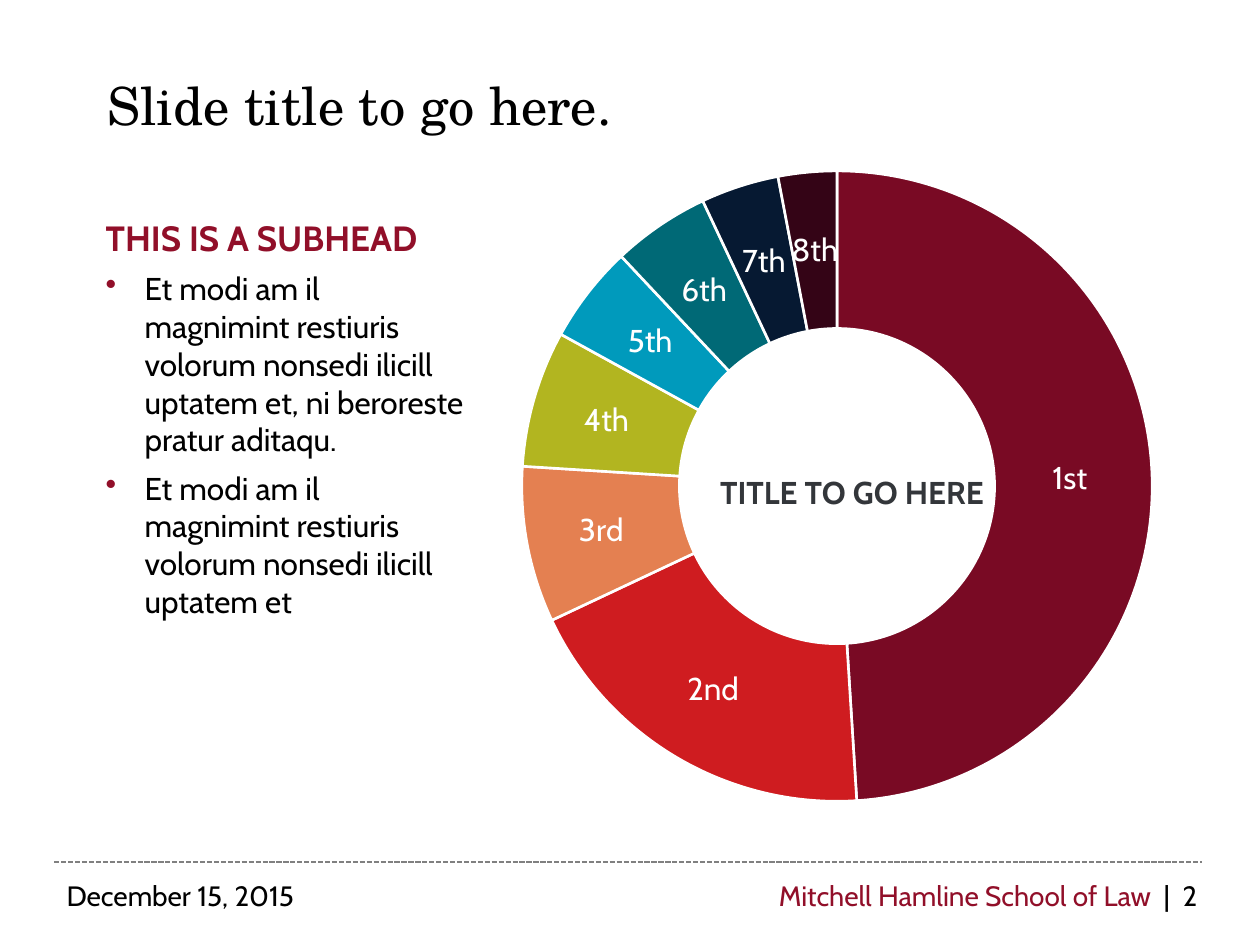
"""Build a slide with a subhead, two bullets and a titled doughnut chart."""
from pptx import Presentation
from pptx.chart.data import CategoryChartData
from pptx.dml.color import RGBColor
from pptx.enum.chart import XL_CHART_TYPE
from pptx.enum.dml import MSO_LINE
from pptx.enum.shapes import MSO_CONNECTOR
from pptx.enum.text import MSO_ANCHOR, PP_ALIGN
from pptx.oxml import parse_xml
from pptx.oxml.ns import nsdecls, qn
from pptx.oxml.xmlchemy import OxmlElement
from pptx.util import Inches, Pt

BLACK = RGBColor(0x00, 0x00, 0x00)
WHITE = RGBColor(0xFF, 0xFF, 0xFF)
GREY = RGBColor(0x80, 0x80, 0x80)
SLATE = RGBColor(0x33, 0x36, 0x3A)
CRIMSON = RGBColor(0x91, 0x0F, 0x29)
ORANGE = RGBColor(0xDE, 0x61, 0x26)
SLICES = [
    ("1st ", 49, RGBColor(0x79, 0x0A, 0x24)),
    ("2nd ", 19, RGBColor(0xCF, 0x1C, 0x20)),
    ("3rd ", 8, ORANGE),
    ("4th ", 7, RGBColor(0xB2, 0xB5, 0x20)),
    ("5th", 5, RGBColor(0x00, 0x9A, 0xBC)),
    ("6th", 5, RGBColor(0x00, 0x69, 0x76)),
    ("7th", 4, RGBColor(0x06, 0x19, 0x32)),
    ("8th", 3, RGBColor(0x34, 0x04, 0x16)),
]
BODY = "Cabin"
HEAD = "TeX Gyre Schola"
COLS, ROWS = 100, 75


def style(font, size=18, color=BLACK, face=BODY, bold=False):
    font.name, font.size, font.bold = face, Pt(size), bold
    font.color.rgb = color


def write(par, text, align=PP_ALIGN.LEFT, after=0, bullet=None, **look):
    par.alignment = align
    par.space_after = Pt(after)
    if bullet:
        props = par._p.get_or_add_pPr()
        props.set("marL", str(Inches(0.31)))
        props.set("indent", str(-Inches(0.31)))
        props.append(parse_xml(
            f'<a:buClr {nsdecls("a")}><a:srgbClr val="{bullet}"/></a:buClr>'))
        props.append(parse_xml(f'<a:buChar {nsdecls("a")} char="•"/>'))
    run = par.add_run()
    run.text = text
    style(run.font, **look)


def place(kind, x, y, w=None, h=None):
    sizes = {"x": x, "y": y, "w": w, "h": h}
    items = [("layoutTarget", "inner")] if w else []
    items += [(f"{key}Mode", "edge") for key in "xy"]
    items += [(key, val) for key, val in sizes.items() if val is not None]
    inner = "".join(f'<c:{key} val="{val}"/>' for key, val in items)
    old = kind.find(qn("c:layout"))
    if old is not None:
        kind.remove(old)
    layout = parse_xml(f'<c:layout {nsdecls("c")}>'
                       f'<c:manualLayout>{inner}</c:manualLayout></c:layout>')
    text = kind.find(qn("c:tx"))
    kind.insert(0 if text is None else 1, layout)


class Deck:
    """Hold the current slide and its grid, and draw each kind of element."""

    def __init__(self):
        self.prs = Presentation()
        self.prs.slide_width, self.prs.slide_height = Inches(10), Inches(7.5)
        self.slide = self.prs.slides.add_slide(self.prs.slide_layouts[5])

    def grid(self, col, row, wide, high):
        unit = self.prs.slide_width / COLS
        rise = self.prs.slide_height / ROWS
        return [round(n) for n in
                (col * unit, row * rise, wide * unit, high * rise)]

    def title(self, text, *spot):
        box = self.slide.shapes.title
        box.left, box.top, box.width, box.height = self.grid(*spot)
        frame = box.text_frame
        frame.margin_left = frame.margin_right = 0
        frame.margin_top = frame.margin_bottom = 0
        frame.vertical_anchor = MSO_ANCHOR.TOP
        write(frame.paragraphs[0], text, size=30, face=HEAD)

    def text(self, *spot, anchor=MSO_ANCHOR.TOP):
        frame = self.slide.shapes.add_textbox(*self.grid(*spot)).text_frame
        frame.word_wrap = True
        frame.vertical_anchor = anchor
        return frame

    def rule(self, *spot):
        left, top, wide, high = self.grid(*spot)
        line = self.slide.shapes.add_connector(
            MSO_CONNECTOR.STRAIGHT, left, top, left + wide, top + high)
        line.line.color.rgb, line.line.width = GREY, Pt(1)
        line.line.dash_style = MSO_LINE.SQUARE_DOT
        line._element.spPr.append(OxmlElement("a:effectLst"))

    def ring(self, title, slices, *spot):
        data = CategoryChartData()
        data.categories = [name for name, _, _ in slices]
        data.add_series("Series 1", [val for _, val, _ in slices])
        chart = self.slide.shapes.add_chart(
            XL_CHART_TYPE.DOUGHNUT, *self.grid(*spot), data).chart
        style(chart.font, face="Calibri")
        chart.has_legend = False
        chart.has_title = True
        head = chart.chart_title
        write(head.text_frame.paragraphs[0], title, color=SLATE, bold=True,
              align=PP_ALIGN.CENTER)
        head.include_in_layout = True
        place(head._element, 0.39, 0.51)
        plot = chart.plots[0]
        place(chart._chartSpace.chart.plotArea, 0.17, 0.09, 0.72, 0.9)
        plot.vary_by_categories = True
        plot._element.find(qn("c:holeSize")).set("val", "50")
        plot.has_data_labels = True
        labels = plot.data_labels
        labels.show_category_name = True
        labels.show_value = labels.show_percentage = False
        style(labels.font, color=WHITE)
        for spot, (_, _, color) in enumerate(slices):
            form = plot.series[0].points[spot].format
            form.fill.solid()
            form.fill.fore_color.rgb = color
            form.line.color.rgb, form.line.width = WHITE, Pt(1.5)
            if color == ORANGE:
                alpha = OxmlElement("a:alpha")
                alpha.set("val", "80000")
                fill = plot.series[0]._element.findall(qn("c:dPt"))[spot]
                next(fill.iter(qn("a:srgbClr"))).append(alpha)


def main():
    deck = Deck()
    deck.ring("TITLE TO GO HERE", SLICES, 29.6, 8.4, 69.5, 55.9)
    deck.title("Slide title to go here.", 8.5, 5.8, 55.6, 5)

    body = deck.text(7.4, 16.7, 30.4, 38.8)
    write(body.paragraphs[0], "THIS IS A SUBHEAD", after=6, size=20,
          color=CRIMSON, bold=True)
    start = "Et modi am il magnimint restiuris volorum nonsedi ilicill uptatem et"
    for end in (", ni beroreste pratur aditaqu.", ""):
        write(body.add_paragraph(), start + end, after=6, bullet=CRIMSON)

    deck.rule(4.3, 68.4, 91.1, 0)
    date = deck.text(4.3, 69.2, 46.1, 3.7, anchor=MSO_ANCHOR.MIDDLE)
    write(date.paragraphs[0], "December 15, 2015", size=16)
    foot = deck.text(49.9, 69.2, 46.1, 3.7, anchor=MSO_ANCHOR.MIDDLE)
    for text, color in (("Mitchell Hamline School of Law  ", CRIMSON),
                        ("|  2", BLACK)):
        write(foot.paragraphs[0], text, align=PP_ALIGN.RIGHT, size=16,
              color=color)
    deck.prs.save("out.pptx")


if __name__ == "__main__":
    main()
